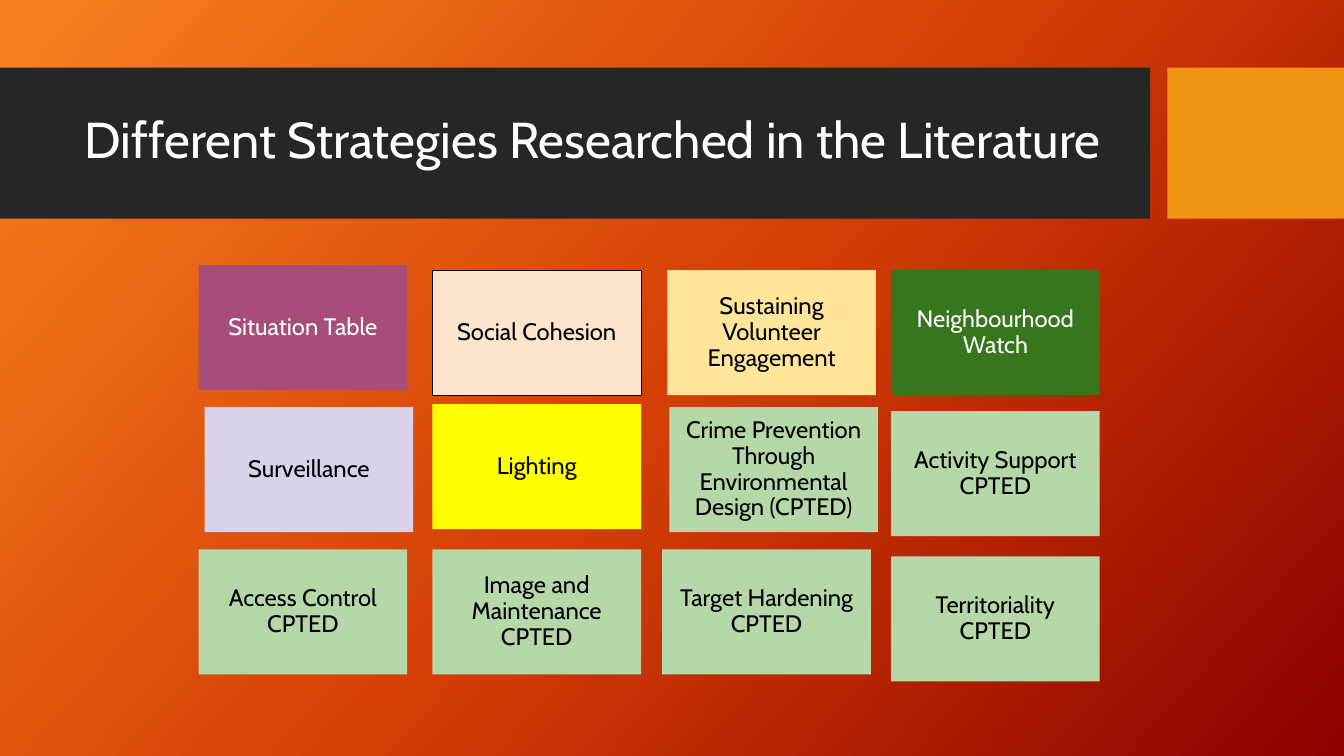
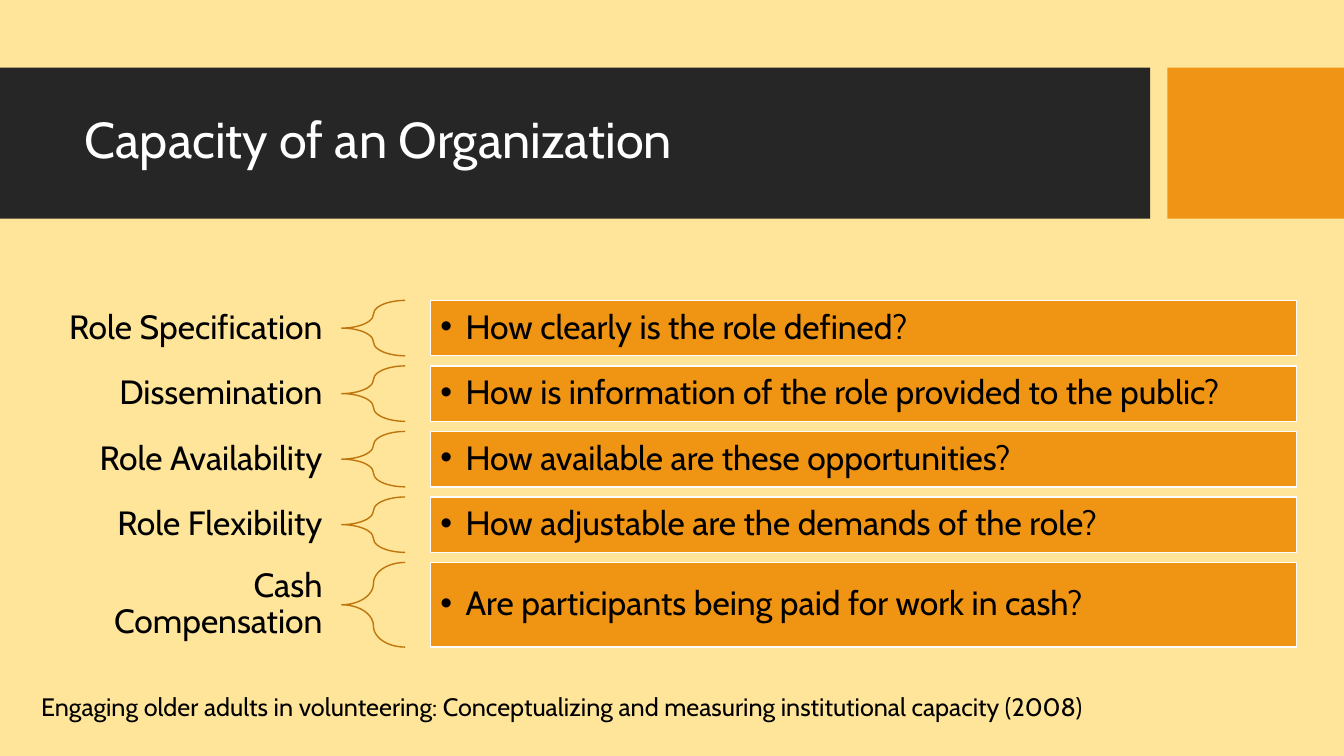
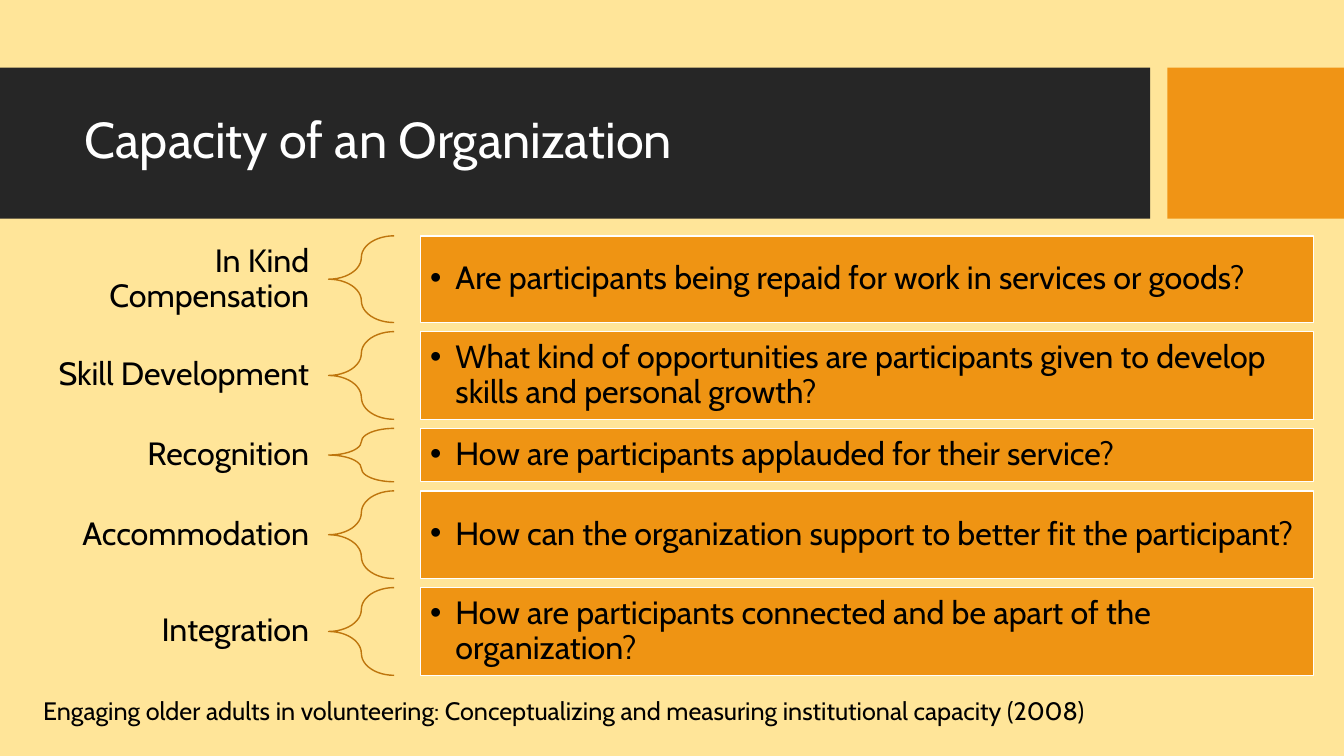
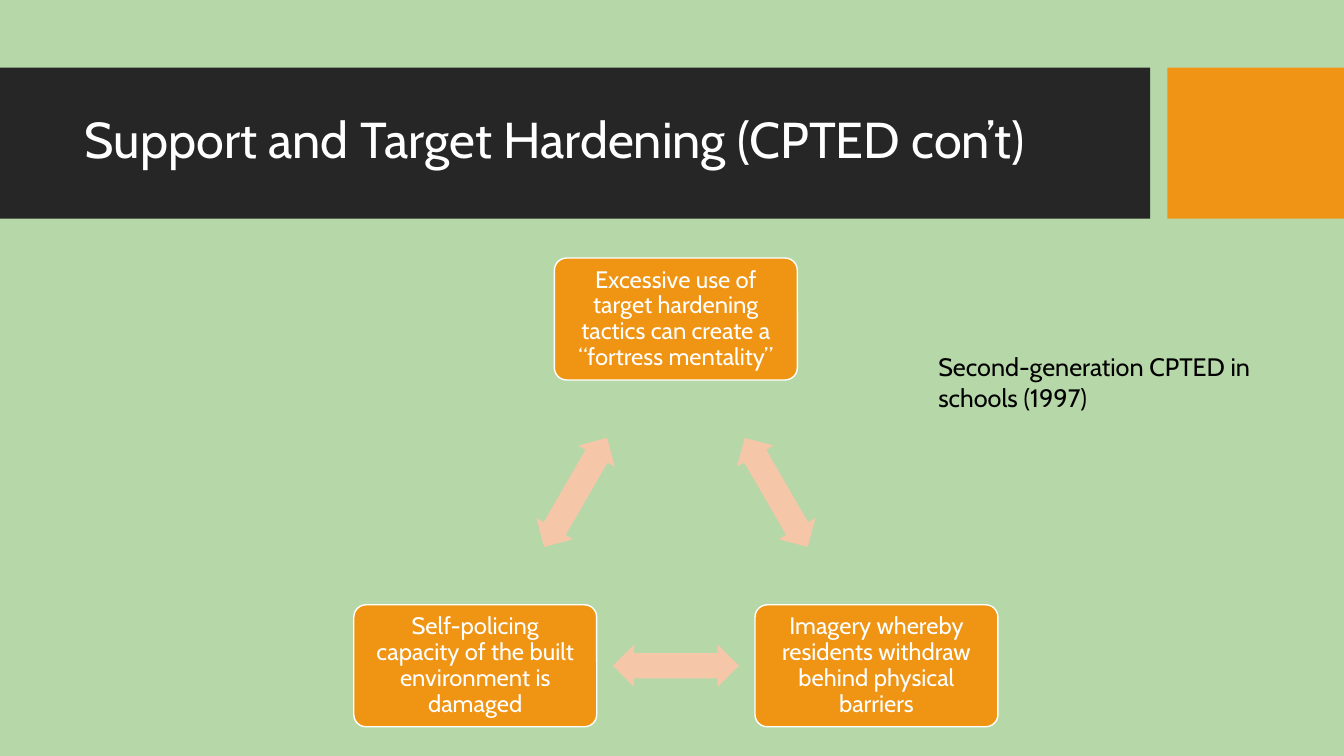
from itertools import pairwise

from lxml.etree import SubElement
from pptx import Presentation
from pptx.dml.color import RGBColor
from pptx.enum.shapes import MSO_SHAPE as Preset
from pptx.enum.text import MSO_ANCHOR as Anchor
from pptx.enum.text import MSO_AUTO_SIZE as AutoSize
from pptx.enum.text import PP_ALIGN as Align
from pptx.oxml.ns import qn
from pptx.util import Inches, Pt

# Grid: square cells, a tenth of an inch each
COLUMNS, ROWS = 133.33, 75

# Shared style
FONT = "Cabin"
BLACK, WHITE = "000000", "FFFFFF"
CHARCOAL, AMBER = "262626", "F09415"
ORANGE, BROWN, PEACH = "EF9413", "BE750D", "F5C7A8"
CREAM, SAGE = "FFE599", "B6D7A8"
TITLE_ONLY = 5
TITLE_INSETS = (1, 0.5)
TIGHT = 0.9

SOURCE_2008 = ("Engaging older adults in volunteering: Conceptualizing and "
               "measuring institutional capacity (2008)")

# Strategy tiles: column, row, nudge right, nudge down, fill, text colour, text
TILE_COLUMNS = (19.7, 42.9, 66.2, 88.4)
TILE_ROWS = (26.8, 40.4, 54.5)
TILE_SIZE = (20.7, 12.4)
TILES = [
    (0, 0, 0, -0.5, "A64D79", WHITE, "Situation Table"),
    (1, 0, 0, 0, "FCE5CD", BLACK, "Social Cohesion"),
    (2, 0, 0, 0, CREAM, BLACK, "Sustaining Volunteer Engagement"),
    (3, 0, 0, 0, "38761D", WHITE, "Neighbourhood Watch"),
    (0, 1, 0.6, 0, "D9D2E9", BLACK, "Surveillance"),
    (1, 1, 0, -0.3, "FFFF00", BLACK, "Lighting"),
    (2, 1, 0.2, 0, SAGE, BLACK,
     "Crime Prevention Through Environmental Design (CPTED)"),
    (3, 1, 0, 0.4, SAGE, BLACK, "Activity Support\nCPTED"),
    (0, 2, 0, 0, SAGE, BLACK, "Access Control\nCPTED"),
    (1, 2, 0, 0, SAGE, BLACK, "Image and Maintenance\nCPTED"),
    (2, 2, -0.5, 0, SAGE, BLACK, "Target Hardening\nCPTED"),
    (3, 2, 0, 0.7, SAGE, BLACK, "Territoriality\nCPTED"),
]
OUTLINED_TILE = "Social Cohesion"

# Capacity rows: height, label, question
CAPACITY_FIRST = [
    (5.5, "Role Specification", "How clearly is the role defined?"),
    (5.5, "Dissemination",
     "How is information of the role provided to the public?"),
    (5.5, "Role Availability", "How available are these opportunities?"),
    (5.5, "Role Flexibility", "How adjustable are the demands of the role?"),
    (8.4, "Cash Compensation",
     "Are participants being paid for work in cash?"),
]
CAPACITY_SECOND = [
    (8.6, "In Kind Compensation",
     "Are participants being repaid for work in services or goods?"),
    (8.7, "Skill Development",
     "What kind of opportunities are participants given to develop skills "
     "and personal growth?"),
    (5.3, "Recognition", "How are participants applauded for their service?"),
    (8.7, "Accommodation",
     "How can the organization support to better fit the participant?"),
    (8.7, "Integration",
     "How are participants connected and be apart of the organization?"),
]

# Cycle cards: centre and text, clockwise from the top
CARD_SIZE = (24.1, 12.1)
ARROW_SIZE = (12.5, 4.2)
CARDS = [
    (67.05, 31.65, "Excessive use of target hardening tactics can create a "
                   "“fortress mentality”"),
    (86.95, 66.05, "Imagery whereby residents withdraw behind physical "
                   "barriers"),
    (47.15, 66.05, "Self-policing capacity of the built environment is "
                   "damaged"),
]


def cells(count):
    return Inches(count / 10)


def color(hex_value):
    return RGBColor.from_string(hex_value)


def centred(x, y, size):
    width, height = size
    return x - width / 2, y - height / 2, width, height


def add_bullet(paragraph):
    properties = paragraph._p.get_or_add_pPr()
    properties.set("marL", str(cells(2.5)))
    properties.set("indent", str(-cells(2.5)))
    bullet_color = SubElement(properties, qn("a:buClr"))
    SubElement(bullet_color, qn("a:srgbClr"), val=BLACK)
    SubElement(properties, qn("a:buFont"), typeface="Arial")
    SubElement(properties, qn("a:buChar"), char="•")


def write_text(shape, text, size, text_color=BLACK, align=Align.LEFT,
               anchor=Anchor.MIDDLE, insets=(0.7, 0.7), spacing=TIGHT,
               bullet=False):
    frame = shape.text_frame
    frame.word_wrap = True
    frame.auto_size = AutoSize.NONE
    frame.vertical_anchor = anchor
    frame.margin_left = frame.margin_right = cells(insets[0])
    frame.margin_top = frame.margin_bottom = cells(insets[1])
    for index, line in enumerate(text.split("\n")):
        paragraph = frame.add_paragraph() if index else frame.paragraphs[0]
        if bullet:
            add_bullet(paragraph)
        paragraph.alignment = align
        paragraph.line_spacing = spacing
        run = paragraph.add_run()
        run.text = line
        run.font.name = FONT
        run.font.size = Pt(size)
        run.font.color.rgb = color(text_color)


def add_preset(slide, preset, box, fill=None, line=None, weight=1,
               adjustments=()):
    shape = slide.shapes.add_shape(preset, *map(cells, box))
    shape.shadow.inherit = False
    if fill:
        shape.fill.solid()
        shape.fill.fore_color.rgb = color(fill)
    else:
        shape.fill.background()
    if line:
        shape.line.color.rgb = color(line)
        shape.line.width = Pt(weight)
    else:
        shape.line.fill.background()
    for index, value in enumerate(adjustments):
        shape.adjustments[index] = value
    return shape


def add_label(slide, box, text, size, **style):
    write_text(slide.shapes.add_textbox(*map(cells, box)), text, size, **style)


def add_note(slide, box, text, spacing):
    add_label(slide, box, text, 18, anchor=Anchor.TOP, insets=(1, 0.5),
              spacing=spacing)


def prepare_layout(layout, slide):
    """Set the shared title place and put the two bands behind it."""
    title = layout.placeholders[0]
    title.left, title.top, title.width, title.height = map(
        cells, (7.4, 8.2, 105.1, 11.8))
    bands = [((0, 6.7, 114.1, 15), CHARCOAL),
             ((115.8, 6.7, COLUMNS - 115.8, 15), AMBER)]
    for index, (box, fill) in enumerate(bands):
        band = add_preset(slide, Preset.RECTANGLE, box, fill)
        layout.shapes.element.insert(2 + index, band.element)


def add_titled_slide(presentation, title, background=None):
    layout = presentation.slide_layouts[TITLE_ONLY]
    slide = presentation.slides.add_slide(layout)
    if len(presentation.slides) == 1:
        prepare_layout(layout, slide)
    if background:
        slide.background.fill.solid()
        slide.background.fill.fore_color.rgb = color(background)
    write_text(slide.shapes.title, title, 36, WHITE, insets=TITLE_INSETS)
    return slide


def paint_gradient(slide, stops, clockwise_angle):
    fill = slide.background.fill
    fill.gradient()
    fill.gradient_angle = 360 - clockwise_angle
    stop_list = slide.element.find(".//" + qn("a:gsLst"))
    for old_stop in list(stop_list):
        stop_list.remove(old_stop)
    for percent, value in stops:
        stop = SubElement(stop_list, qn("a:gs"), pos=str(percent * 1000))
        SubElement(stop, qn("a:srgbClr"), val=value)


def add_strategies_slide(presentation):
    slide = add_titled_slide(
        presentation, "Different Strategies Researched in the Literature")
    paint_gradient(slide, [(0, "F78121"), (50, "D54006"), (100, "8C0000")], 42)
    for column, row, right, down, fill, text_color, text in TILES:
        box = (TILE_COLUMNS[column] + right, TILE_ROWS[row] + down, *TILE_SIZE)
        line = BLACK if text == OUTLINED_TILE else None
        tile = add_preset(slide, Preset.RECTANGLE, box, fill, line, 0.75)
        write_text(tile, text, 17, text_color, Align.CENTER)


def add_capacity_slide(presentation, rows, top, gap, label_left, label_width,
                       brace_width, bar_left, bar_width, size, note_place):
    slide = add_titled_slide(
        presentation, "Capacity of an Organization", CREAM)
    brace_left = label_left + label_width
    for height, label, question in rows:
        add_label(slide, (label_left, top, label_width, height), label, size,
                  align=Align.RIGHT, insets=(1.9, 0.6))
        add_preset(slide, Preset.LEFT_BRACE,
                   (brace_left, top, brace_width, height),
                   line=BROWN, adjustments=(0.35, 0.5))
        bar = add_preset(slide, Preset.RECTANGLE,
                         (bar_left, top, bar_width, height), ORANGE, WHITE)
        write_text(bar, question, size, insets=(1, 1), bullet=True)
        top += height + gap
    add_note(slide, (*note_place, 124.8, 4.3), SOURCE_2008, 1.07)


def add_cycle_slide(presentation):
    slide = add_titled_slide(
        presentation, "Support and Target Hardening (CPTED con’t)", SAGE)
    for x, y, text in CARDS:
        card = add_preset(slide, Preset.ROUNDED_RECTANGLE,
                          centred(x, y, CARD_SIZE), ORANGE, WHITE,
                          adjustments=(0.1,))
        write_text(card, text, 17, WHITE, Align.CENTER, insets=(1.1, 1))
    # One arrow halfway between each pair of neighbouring cards
    for index, (start, end) in enumerate(pairwise(CARDS + CARDS[:1])):
        middle = ((start[0] + end[0]) / 2, (start[1] + end[1]) / 2)
        arrow = add_preset(slide, Preset.LEFT_RIGHT_ARROW,
                           centred(*middle, ARROW_SIZE), PEACH,
                           adjustments=(0.6, 0.5))
        arrow.rotation = 60 + 120 * index
    add_note(slide, (92.1, 34.4, 36.5, 7.1),
             "Second-generation CPTED in schools (1997)", 1.0)


def main():
    presentation = Presentation()
    presentation.slide_width = cells(COLUMNS)
    presentation.slide_height = cells(ROWS)
    add_strategies_slide(presentation)
    add_capacity_slide(presentation, CAPACITY_FIRST, top=29.8, gap=1,
                       label_left=2.3, label_width=31.6, brace_width=6.3,
                       bar_left=42.7, bar_width=85.9, size=24,
                       note_place=(3.1, 67.9))
    add_capacity_slide(presentation, CAPACITY_SECOND, top=23.4, gap=0.9,
                       label_left=0, label_width=32.6, brace_width=6.5,
                       bar_left=41.7, bar_width=88.6, size=23,
                       note_place=(3.3, 68.3))
    add_cycle_slide(presentation)
    presentation.save("out.pptx")


if __name__ == "__main__":
    main()
